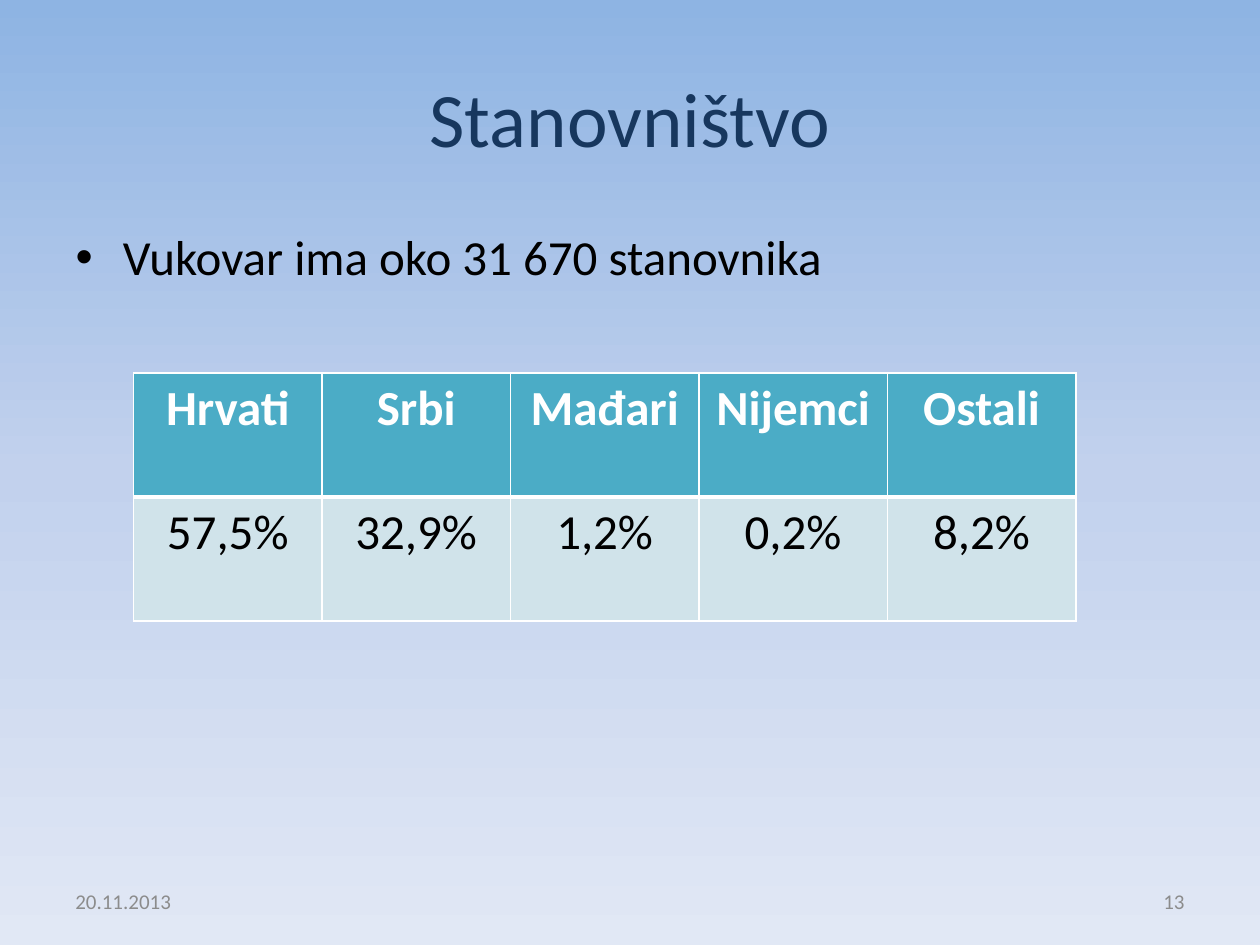
from dataclasses import dataclass

from lxml import etree
from pptx import Presentation
from pptx import util as u
from pptx.dml.color import RGBColor
from pptx.enum import text
from pptx.oxml import ns

FONT = "Calibri"
COLORS = {
    "title": "17375E",
    "body": "000000",
    "footer": "8C8C8C",
    "white": "FFFFFF",
    "header_fill": "4BACC6",
    "data_fill": "D0E3EA",
}
BACKGROUND_STOPS = {0: "8EB4E3", 50: "C2D1ED", 100: "E1E8F5"}


@dataclass
class Box:
    left: float
    top: float
    width: float
    height: float

    def lengths(self) -> tuple:
        return tuple(map(u.Inches, (self.left, self.top, self.width, self.height)))


@dataclass
class Footer:
    label: str
    box: Box
    alignment: text.PP_ALIGN


@dataclass
class RowStyle:
    fill: str
    color: str
    bold: bool
    top_line: float
    bottom_line: float


@dataclass
class Group:
    name: str
    share: str


GROUPS = [
    Group("Hrvati", "57,5%"),
    Group("Srbi", "32,9%"),
    Group("Mađari", "1,2%"),
    Group("Nijemci", "0,2%"),
    Group("Ostali", "8,2%"),
]
HEADER_STYLE = RowStyle("header_fill", "white", True, 1, 3)
DATA_STYLE = RowStyle("data_fill", "body", False, 3, 1)
FOOTERS = [
    Footer("20.11.2013", Box(0.5, 6.95, 2.33, 0.4), text.PP_ALIGN.LEFT),
    Footer("13", Box(7.17, 6.95, 2.33, 0.4), text.PP_ALIGN.RIGHT),
]


def write(frame, label: str, size: float, color: str,
          alignment: text.PP_ALIGN, bold: bool = False) -> None:
    paragraph = frame.paragraphs[0]
    paragraph.alignment = alignment
    paragraph.space_before = u.Pt(0)
    run = paragraph.add_run()
    run.text = label
    run.font.name = FONT
    run.font.size = u.Pt(size)
    run.font.bold = bold
    run.font.color.rgb = RGBColor.from_string(COLORS[color])


def add_color(parent, color: str) -> None:
    etree.SubElement(parent, ns.qn("a:srgbClr"), val=color)


def paint_background(slide) -> None:
    fill = slide.background.fill
    fill.gradient()
    gradient = slide.element.find(".//" + ns.qn("a:gradFill"))
    stops = gradient.find(ns.qn("a:gsLst"))
    for stop in list(stops):
        stops.remove(stop)
    for position, color in BACKGROUND_STOPS.items():
        stop = etree.SubElement(stops, ns.qn("a:gs"), pos=str(position * 1000))
        add_color(stop, color)
    # XML angles run clockwise, so 90 degrees goes from top to bottom
    gradient.find(ns.qn("a:lin")).set("ang", str(90 * 60000))


def place(shape, box: Box) -> None:
    shape.left, shape.top, shape.width, shape.height = box.lengths()


def add_borders(cell, style: RowStyle) -> None:
    properties = cell._tc.get_or_add_tcPr()
    widths = {"lnL": 1, "lnR": 1, "lnT": style.top_line, "lnB": style.bottom_line}
    for side, width in widths.items():
        line = etree.SubElement(properties, ns.qn("a:" + side), w=str(u.Pt(width)))
        add_color(etree.SubElement(line, ns.qn("a:solidFill")), COLORS["white"])


def fill_cell(cell, label: str, style: RowStyle) -> None:
    add_borders(cell, style)
    cell.fill.solid()
    cell.fill.fore_color.rgb = RGBColor.from_string(COLORS[style.fill])
    write(cell.text_frame, label, 28, style.color, text.PP_ALIGN.CENTER, style.bold)


def add_population_table(slide, box: Box) -> None:
    table = slide.shapes.add_table(2, len(GROUPS), *box.lengths()).table
    for column, group in enumerate(GROUPS):
        fill_cell(table.cell(0, column), group.name, HEADER_STYLE)
        fill_cell(table.cell(1, column), group.share, DATA_STYLE)


def add_footer(slide, footer: Footer) -> None:
    shape = slide.shapes.add_textbox(*footer.box.lengths())
    frame = shape.text_frame
    frame.word_wrap = True
    frame.vertical_anchor = text.MSO_ANCHOR.MIDDLE
    write(frame, footer.label, 12, "footer", footer.alignment)


def main() -> None:
    presentation = Presentation()
    presentation.slide_width = u.Inches(10)
    presentation.slide_height = u.Inches(7.5)
    slide = presentation.slides.add_slide(presentation.slide_layouts[1])
    paint_background(slide)

    # Title and bullet
    title, body = slide.placeholders
    place(title, Box(0.5, 0.3, 9, 1.25))
    title.text_frame.vertical_anchor = text.MSO_ANCHOR.MIDDLE
    write(title.text_frame, "Stanovništvo", 44, "title", text.PP_ALIGN.CENTER)
    place(body, Box(0.5, 1.75, 9, 4.95))
    write(body.text_frame, "Vukovar ima oko 31 670 stanovnika", 28, "body",
          text.PP_ALIGN.LEFT)

    # Population shares
    add_population_table(slide, Box(1.06, 2.96, 7.48, 1.97))

    # Date and page number
    for footer in FOOTERS:
        add_footer(slide, footer)

    presentation.save("out.pptx")


if __name__ == "__main__":
    main()
